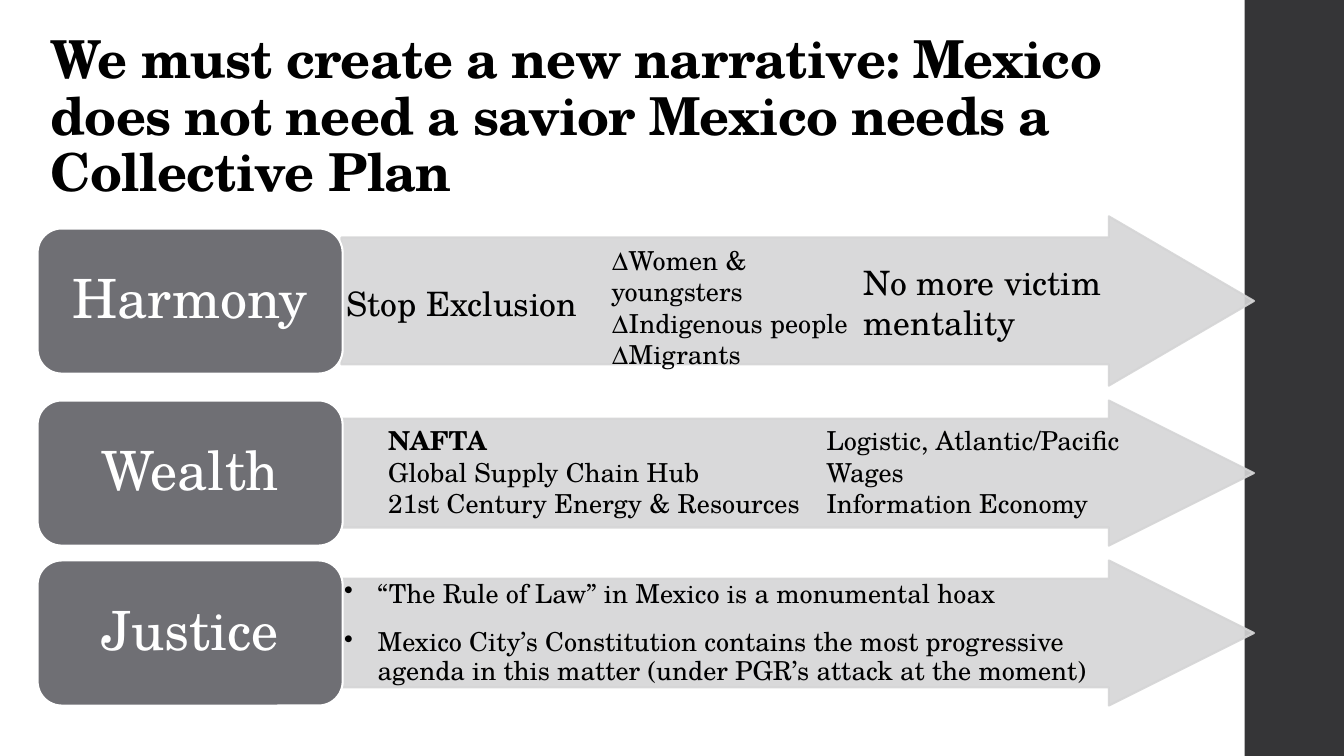
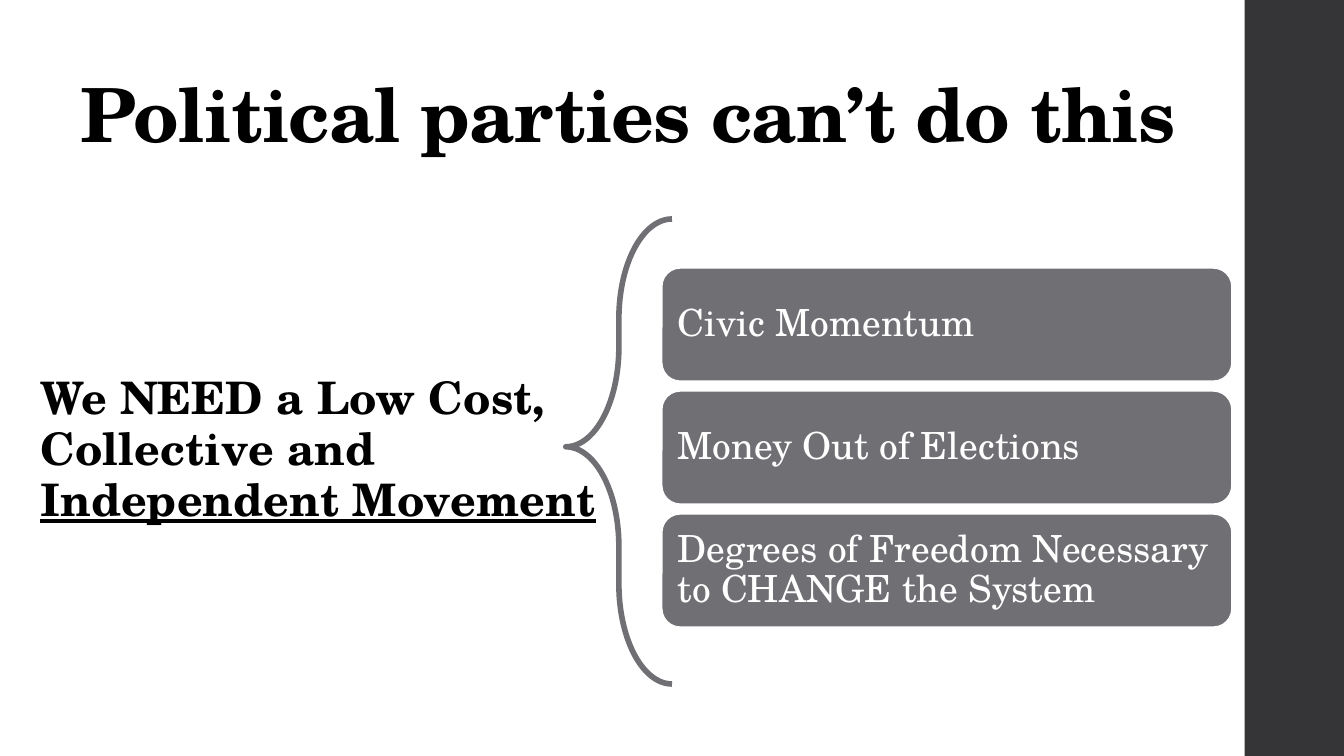
from lxml import etree
from pptx import Presentation
from pptx.dml.color import RGBColor
from pptx.enum.shapes import MSO_SHAPE
from pptx.enum.text import MSO_ANCHOR, PP_ALIGN
from pptx.oxml.ns import qn
from pptx.util import Inches, Pt

RECT, PILL = MSO_SHAPE.RECTANGLE, MSO_SHAPE.ROUNDED_RECTANGLE
ARROW, BRACE = MSO_SHAPE.RIGHT_ARROW, MSO_SHAPE.LEFT_BRACE
TOP, MID, BASE = MSO_ANCHOR.TOP, MSO_ANCHOR.MIDDLE, MSO_ANCHOR.BOTTOM
LEFT, CENTER = PP_ALIGN.LEFT, PP_ALIGN.CENTER

WIDE, HIGH = Inches(10), Inches(5.625)
CELL = WIDE // 100
FONT = "TeX Gyre Schola"
HUES = {"band": "353537", "pill": "6F6F74", "arrow": "D5D5D6",
        "ink": "000000", "white": "FFFFFF"}


def cells(*nums):
    return [round(n * CELL) for n in nums]


def hue(name):
    return RGBColor.from_string(HUES[name])


def fade(fill, share):
    for tone in fill.iter(qn("a:srgbClr")):
        etree.SubElement(tone, qn("a:alpha"), val=str(share * 1000))


def shape(slide, kind, area, fill=None, line=None, width=1.1):
    item = slide.shapes.add_shape(kind, *cells(*area))
    item.shadow.inherit = False
    if fill:
        item.fill.solid()
        item.fill.fore_color.rgb = hue(fill)
    else:
        item.fill.background()
    if line:
        item.line.color.rgb = hue(line)
        item.line.width = Pt(width)
    else:
        item.line.fill.background()
    return item


def write(item, lines, size, color="ink", bold=False, align=LEFT, anchor=TOP,
          pad=(1, 0.5, 1, 0.5), wrap=True, lead=1, track=0):
    frame = item.text_frame
    frame.word_wrap = wrap
    frame.vertical_anchor = anchor
    (frame.margin_left, frame.margin_top,
     frame.margin_right, frame.margin_bottom) = cells(*pad)
    for i, line in enumerate(lines):
        para = frame.add_paragraph() if i else frame.paragraphs[0]
        para.add_run().text = line
        para.alignment = align
        para.line_spacing = lead
        font = para.font
        font.name, font.size, font.bold = FONT, Pt(size), bold
        font.color.rgb = hue(color)
        if track:
            font._rPr.set("spc", str(track))
    return frame.paragraphs


def label(slide, area, lines, size, **style):
    return write(slide.shapes.add_textbox(*cells(*area)), lines, size, **style)


def start(deck, title, area, size):
    slide = deck.slides.add_slide(deck.slide_layouts[6])
    shape(slide, RECT, (92.6, 0, 7.5, 56.25), "band")
    label(slide, area, [title], size, bold=True, anchor=BASE, lead=0.9, track=-40)
    return slide


def goal(slide, name, top, grow=0):
    high = 10.8 + grow
    arrow = shape(slide, ARROW, (25.4, top - grow / 2, 67.9, high), "arrow", "arrow")
    arrow.adjustments[0] = 0.75
    arrow.adjustments[1] = 10.8 / high
    fade(arrow._element.spPr, 90)
    pill = shape(slide, PILL, (2.8, top, 22.7, 10.8), "pill", "white")
    write(pill, [name], 29, "white", align=CENTER, anchor=MID, lead=0.9)
    return arrow


def bullet(para):
    props = para._p.get_or_add_pPr()
    props.set("marL", str(Inches(0.25)))
    props.set("indent", str(-Inches(0.25)))
    mark = etree.Element(qn("a:buChar"), char="•")
    props.insert_element_before(mark, "a:tabLst", "a:defRPr", "a:extLst")


def plan(deck):
    slide = start(deck, "We must create a new narrative: Mexico does not need "
                  "a savior Mexico needs a Collective Plan",
                  (2.8, 6.2, 89.8, 9.4), 28)
    goal(slide, "Harmony", 17, 1.8)
    goal(slide, "Wealth", 29.8)
    law = goal(slide, "Justice", 41.7)
    rules = write(law, ["“The Rule of Law” in Mexico is a monumental hoax",
                        "Mexico City’s Constitution contains the most progressive "
                        "agenda in this matter (under PGR’s attack at the moment)"],
                  14, lead=0.9, pad=(0.2, 0.15, 1.5, 0))
    for para in rules:
        bullet(para)
    rules[0].space_after = Pt(11)
    label(slide, (24.8, 20.6, 22, 3.3), ["Stop Exclusion"], 18)
    label(slide, (63.3, 19, 19.9, 6.4), ["No more victim", "mentality"], 18, wrap=False)
    label(slide, (44.5, 17.7, 22, 10.4),
          ["∆Women & youngsters", "∆Indigenous people", "∆Migrants"], 14)
    trade = label(slide, (27.9, 31.1, 32.8, 8.1),
                  ["NAFTA", "Global Supply Chain Hub",
                   "21st Century Energy & Resources"], 14, wrap=False)
    trade[0].font.bold = True
    label(slide, (60.5, 31.1, 24.2, 8.1),
          ["Logistic, Atlantic/Pacific", "Wages", "Information Economy"],
          14, wrap=False)


def needs(deck):
    slide = start(deck, "Political parties can’t do this", (5, 2.9, 90, 9.4), 40)
    need = label(slide, (2, 15.4, 44.2, 37.1),
                 ["We NEED a Low Cost, Collective and "], 24, bold=True,
                 anchor=MID, pad=(1, 0.5, 1, 1.4), lead=0.95, track=10)
    move = need[0].add_run()
    move.text = "Independent Movement"
    move.font.underline = True
    steps = ["Civic Momentum", "Money Out of Elections",
             "Degrees of Freedom Necessary to CHANGE the System"]
    for i, step in enumerate(steps):
        pill = shape(slide, PILL, (49.2, 19.9 + 9.15 * i, 42.5, 8.5),
                     "pill", "white", 1.35)
        write(pill, [step], 20, "white", anchor=MID, pad=(0.8,) * 4, lead=0.9)
    brace = shape(slide, BRACE, (42.1, 16.3, 7.9, 34.6), line="pill", width=3)
    brace.adjustments[0] = 0.94
    brace.adjustments[1] = 0.49


def main():
    deck = Presentation()
    deck.slide_width, deck.slide_height = WIDE, HIGH
    plan(deck)
    needs(deck)
    deck.save("out.pptx")


if __name__ == "__main__":
    main()
